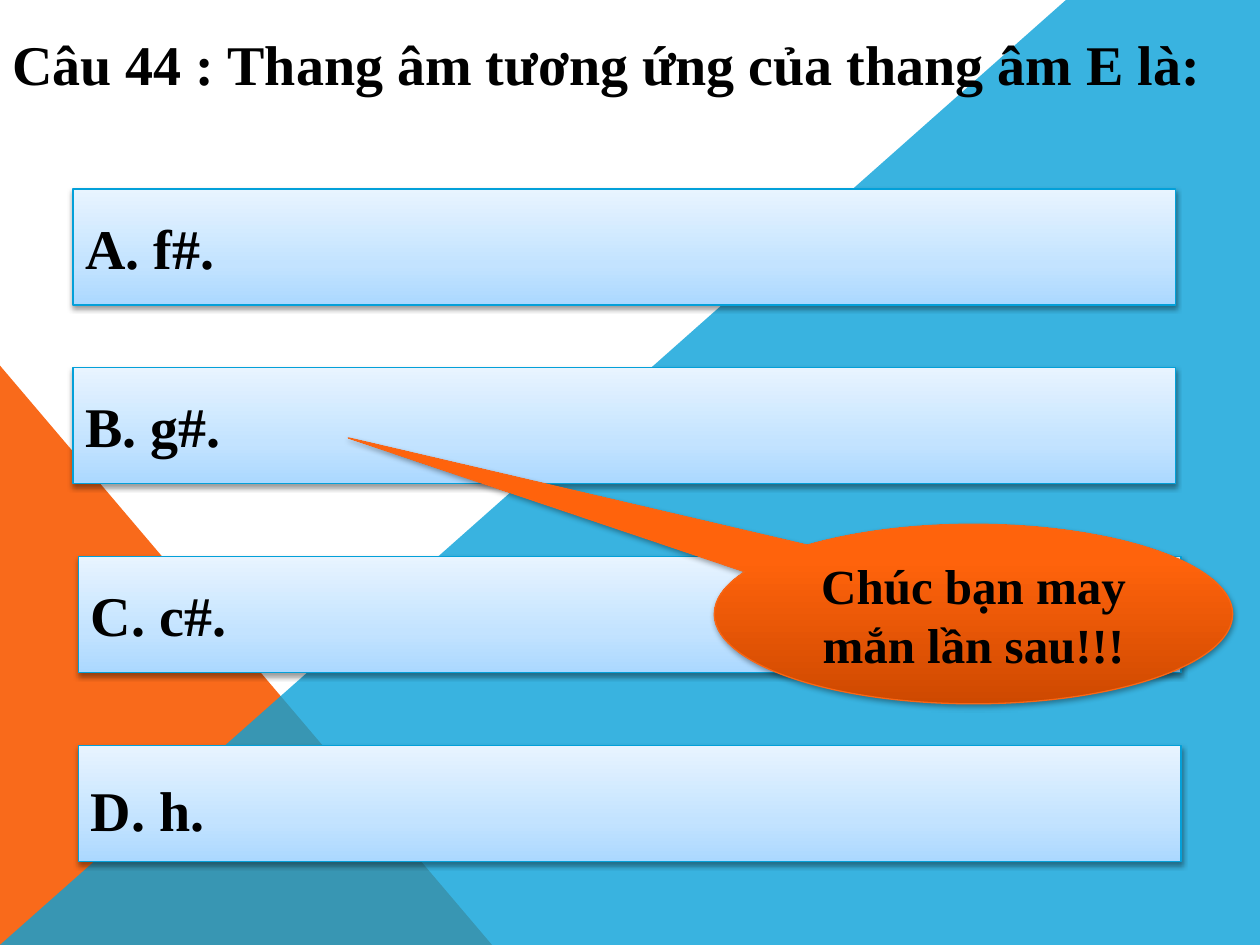
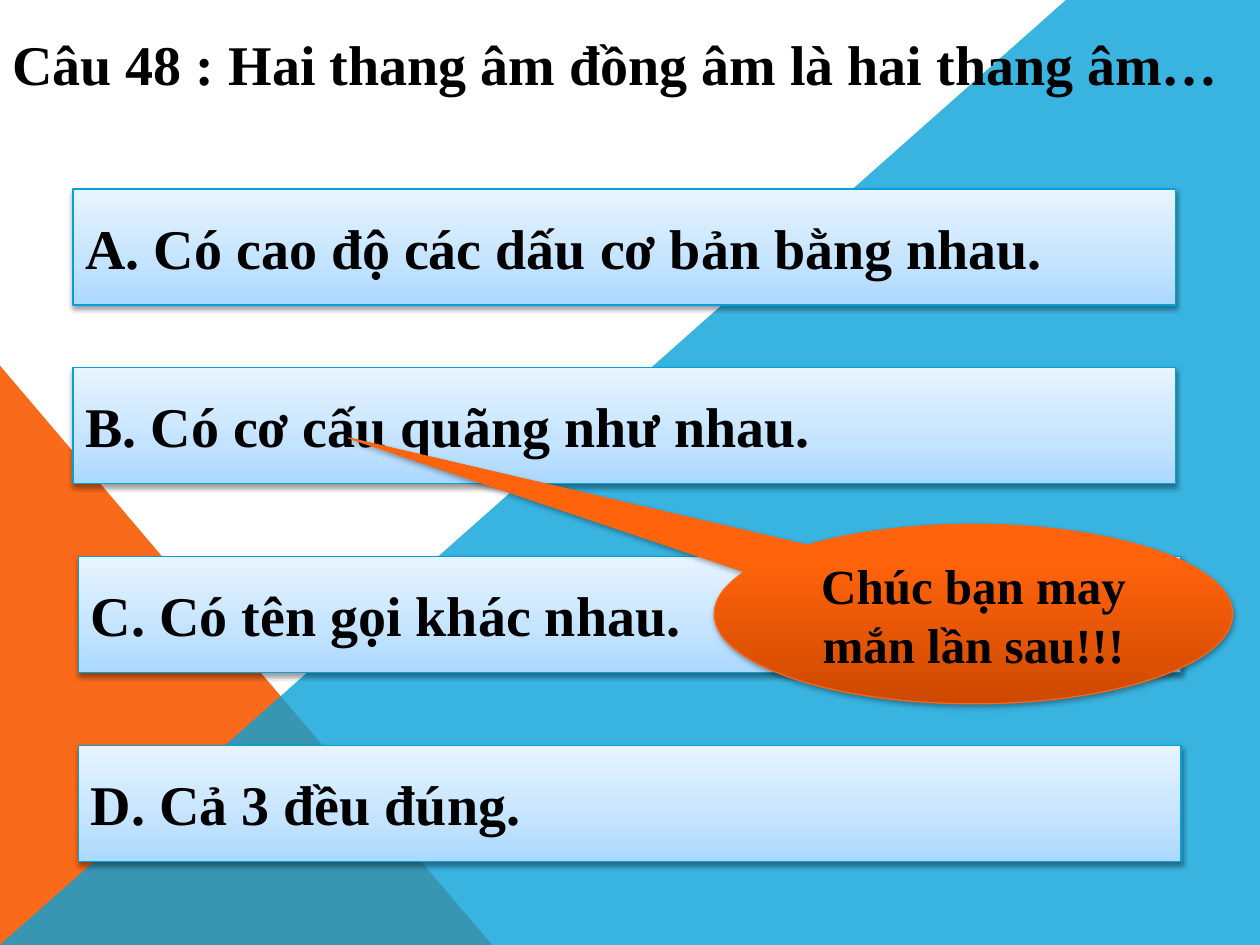
from lxml import etree
from pptx import Presentation
from pptx.dml.color import RGBColor
from pptx.enum.shapes import MSO_SHAPE
from pptx.enum.text import MSO_ANCHOR, PP_ALIGN
from pptx.oxml.ns import qn
from pptx.util import Cm, Pt

RECTANGLE = MSO_SHAPE.RECTANGLE
CALLOUT = MSO_SHAPE.OVAL_CALLOUT
TRIANGLE = MSO_SHAPE.RIGHT_TRIANGLE
MIDDLE = MSO_ANCHOR.MIDDLE
LEFT, CENTER = PP_ALIGN.LEFT, PP_ALIGN.CENTER

QUESTIONS = [
    {"title": "Câu 44 : Thang âm tương ứng của thang âm E là:",
     "answers": ["A. f#.", "B. g#.", "C. c#.", "D. h."],
     "lowered": "D. h."},
    {"title": "Câu 48 : Hai thang âm đồng âm là hai thang âm…",
     "answers": ["A. Có cao độ các dấu cơ bản bằng nhau.",
                 "B. Có cơ cấu quãng như nhau.",
                 "C. Có tên gọi khác nhau.",
                 "D. Cả 3 đều đúng."],
     "lowered": None},
]
FEEDBACK = "Chúc bạn may mắn lần sau!!!"

COLOURS = {"text": "000000", "shadow": "000000", "triangle": "F96A1B", "diagonal": "08A1D9",
           "answer_line": "03A0D9", "feedback_line": "F96615"}
ANSWER_STYLE = {"stops": [(0, "ABD8FF"), (35, "C3E3FF"), (100, "E8F4FF")],
                "line": COLOURS["answer_line"], "shadow_alpha": 38, "shadow_distance": 1.6}
FEEDBACK_STYLE = {"stops": [(0, "CE4900"), (80, "FF630C"), (100, "FF640E")],
                  "line": COLOURS["feedback_line"], "shadow_alpha": 35, "shadow_distance": 1.8}

SLIDE_WIDTH, SLIDE_HEIGHT = 25.4, 19.05
TITLE_BOX = (0, 0, SLIDE_WIDTH, 2.54)
ANSWER_CORNERS = [(1.47, 3.81), (1.47, 7.41), (1.58, 11.22), (1.58, 15.03)]
ANSWER_SIZE = (22.23, 2.34)
FEEDBACK_BOX = (14.4, 10.57, 10.45, 3.62)
FEEDBACK_TIP = (-1.206, -0.981)
TRIANGLE_BOX = (0, 7.37, 9.92, 11.68)
DIAGONAL = [(0, SLIDE_HEIGHT), (21.49, 0), (SLIDE_WIDTH, 0), (SLIDE_WIDTH, SLIDE_HEIGHT)]
LOWERED_INSET = 0.35


def lengths(values):
    return [Cm(value) for value in values]


def add_colour(parent, colour, alpha=None):
    element = etree.SubElement(parent, qn("a:srgbClr"), val=colour)
    if alpha is not None:
        etree.SubElement(element, qn("a:alpha"), val=str(alpha * 1000))


def fill_plain(shape, colour):
    shape.shadow.inherit = False
    shape.fill.solid()
    shape.fill.fore_color.rgb = RGBColor.from_string(colour)
    shape.line.fill.background()


def style_glossy(shape, stops, line, shadow_alpha, shadow_distance):
    """Apply a bottom-to-top gradient, a thin outline and a soft shadow below."""
    shape.fill.gradient()
    shape.fill.gradient_angle = 90
    stop_list = next(shape.element.iter(qn("a:gsLst")))
    for stop in list(stop_list):
        stop_list.remove(stop)
    for position, colour in stops:
        add_colour(etree.SubElement(stop_list, qn("a:gs"), pos=str(position * 1000)), colour)
    shape.line.color.rgb = RGBColor.from_string(line)
    shape.line.width = Pt(0.75)
    shape.shadow.inherit = False
    effects = next(shape.element.iter(qn("a:effectLst")))
    shadow = etree.SubElement(effects, qn("a:outerShdw"), blurRad=str(Pt(3.1)),
                              dist=str(Pt(shadow_distance)), dir="5400000", rotWithShape="0")
    add_colour(shadow, COLOURS["shadow"], shadow_alpha)


def write_text(shape, text, size=32, alignment=LEFT):
    frame = shape.text_frame
    frame.word_wrap = True
    frame.vertical_anchor = MIDDLE
    paragraph = frame.paragraphs[0]
    paragraph.alignment = alignment
    run = paragraph.add_run()
    run.text = text
    font_format = {"name": "Times New Roman", "size": Pt(size), "bold": True}
    for attribute, value in font_format.items():
        setattr(run.font, attribute, value)
    run.font.color.rgb = RGBColor.from_string(COLOURS["text"])


def move_background_to_layout(slide, layout):
    """Build the triangles once and place them on the layout all slides use."""
    triangle = slide.shapes.add_shape(TRIANGLE, *lengths(TRIANGLE_BOX))
    fill_plain(triangle, COLOURS["triangle"])
    start, *corners = [lengths(point) for point in DIAGONAL]
    builder = slide.shapes.build_freeform(*start)
    builder.add_line_segments(corners, close=True)
    diagonal = builder.convert_to_shape()
    fill_plain(diagonal, COLOURS["diagonal"])
    colour = next(diagonal.element.iter(qn("a:srgbClr")))
    etree.SubElement(colour, qn("a:alpha"), val="80000")
    for shape in (triangle, diagonal):
        layout.shapes.element.append(shape.element)


def add_question(slide, question):
    write_text(slide.shapes.add_textbox(*lengths(TITLE_BOX)), question["title"])
    for corner, answer in zip(ANSWER_CORNERS, question["answers"]):
        bar = slide.shapes.add_shape(RECTANGLE, *lengths(corner + ANSWER_SIZE))
        style_glossy(bar, **ANSWER_STYLE)
        write_text(bar, answer)
        if answer == question["lowered"]:
            bar.text_frame.margin_top = Cm(LOWERED_INSET)
    feedback = slide.shapes.add_shape(CALLOUT, *lengths(FEEDBACK_BOX))
    for index, offset in enumerate(FEEDBACK_TIP):
        feedback.adjustments[index] = offset
    style_glossy(feedback, **FEEDBACK_STYLE)
    write_text(feedback, FEEDBACK, size=28, alignment=CENTER)


def main():
    presentation = Presentation()
    presentation.slide_width, presentation.slide_height = lengths((SLIDE_WIDTH, SLIDE_HEIGHT))
    layout = presentation.slide_layouts[6]
    slides = [presentation.slides.add_slide(layout) for _ in QUESTIONS]
    move_background_to_layout(slides[0], layout)
    for slide, question in zip(slides, QUESTIONS):
        add_question(slide, question)
    presentation.save("out.pptx")


if __name__ == "__main__":
    main()
